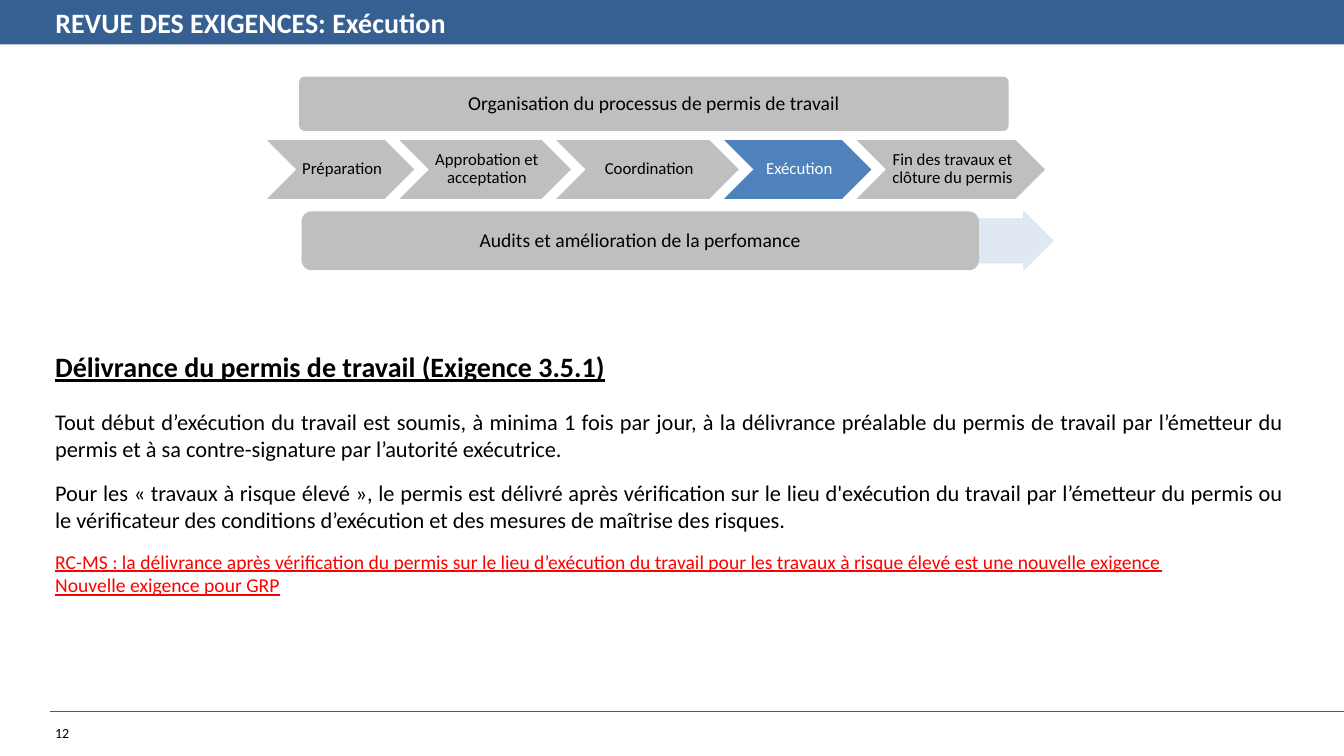
from copy import deepcopy
from dataclasses import dataclass
from typing import Any

from lxml.etree import SubElement
from pptx import Presentation
from pptx.dml.color import RGBColor
from pptx.enum.shapes import MSO_CONNECTOR, MSO_SHAPE as Preset
from pptx.enum.text import MSO_ANCHOR as Anchor, PP_ALIGN as Align
from pptx.oxml.ns import qn
from pptx.util import Cm, Pt

NAVY = RGBColor(0x37, 0x60, 0x92)
BLUE = RGBColor(0x4F, 0x81, 0xBD)
PALE_BLUE = RGBColor(0xDC, 0xE6, 0xF2)
GREY = RGBColor(0xBF, 0xBF, 0xBF)
RED = RGBColor(0xFF, 0, 0)
BLACK = RGBColor(0, 0, 0)
WHITE = RGBColor(0xFF, 0xFF, 0xFF)

SLIDE_WIDTH, SLIDE_HEIGHT = 33.87, 19.05
TEXT_LEFT = 1.14
BAND_HEIGHT = 1.12
STEP_LEFT, STEP_TOP, STEP_HEIGHT = 6.73, 3.53, 1.48
STEP_OVERLAP = 0.37


@dataclass(frozen=True)
class Box:
    left: float
    top: float
    width: float
    height: float

    def lengths(self) -> tuple[Cm, Cm, Cm, Cm]:
        return Cm(self.left), Cm(self.top), Cm(self.width), Cm(self.height)


@dataclass(frozen=True)
class Bar:
    label: str
    box: Box
    rounding: float


@dataclass(frozen=True)
class Step:
    label: str
    width: float
    fill: RGBColor = GREY
    color: RGBColor = BLACK


@dataclass(frozen=True)
class Passage:
    text: str
    font: dict[str, Any]
    layout: dict[str, Any]
    color: RGBColor = BLACK


BARS = (
    Bar("Organisation du processus de permis de travail", Box(7.54, 1.93, 17.88, 1.37), 0.1),
    Bar("Audits et amélioration de la perfomance", Box(7.6, 5.33, 17.07, 1.48), 0.17),
)
STEPS = (
    Step("Préparation", 3.71),
    Step("Approbation et acceptation", 4.32),
    Step("Coordination", 4.6),
    Step("Exécution", 3.71, BLUE, WHITE),
    Step("Fin des travaux et clôture du permis", 4.75),
)
SPACED = {"space_before": Pt(6), "space_after": Pt(6)}
JUSTIFIED = SPACED | {"alignment": Align.JUSTIFY}
PASSAGES = (
    Passage("Délivrance du permis de travail (Exigence 3.5.1)",
            {"size": Pt(20), "bold": True, "underline": True}, {"space_after": Pt(12)}),
    Passage("Tout début d’exécution du travail est soumis, à minima 1 fois par jour, à la "
            "délivrance préalable du permis de travail par l’émetteur du permis et à sa "
            "contre-signature par l’autorité exécutrice.", {"size": Pt(16)}, JUSTIFIED),
    Passage("Pour les « travaux à risque élevé », le permis est délivré après vérification sur "
            "le lieu d'exécution du travail par l’émetteur du permis ou le vérificateur des "
            "conditions d’exécution et des mesures de maîtrise des risques.",
            {"size": Pt(16)}, JUSTIFIED),
    Passage("RC-MS : la délivrance après vérification du permis sur le lieu d’exécution du "
            "travail pour les travaux à risque élevé est une nouvelle exigence\v"
            "Nouvelle exigence pour GRP", {"size": Pt(14), "underline": True}, SPACED, RED),
)


def set_values(target: Any, values: dict[str, Any]) -> None:
    for name, value in values.items():
        setattr(target, name, value)


def write(paragraph: Any, passage: Passage) -> None:
    paragraph.text = passage.text
    set_values(paragraph, passage.layout)
    for run in paragraph.runs:
        set_values(run.font, {"name": "Calibri"} | passage.font)
        run.font.color.rgb = passage.color
    for line_break in paragraph._p.findall(qn("a:br")):
        line_break.insert(0, deepcopy(paragraph.runs[0]._r.rPr))


def add_filled(slide: Any, preset: Preset, box: Box, fill: RGBColor) -> Any:
    shape = slide.shapes.add_shape(preset, *box.lengths())
    shape.shadow.inherit = False
    shape.fill.solid()
    shape.fill.fore_color.rgb = fill
    shape.line.fill.background()
    return shape


def add_label(shape: Any, label: str, size: int, color: RGBColor, left_inset: float) -> None:
    margins = {"margin_left": Cm(left_inset), "margin_right": Cm(0.05),
               "margin_top": Cm(0.05), "margin_bottom": Cm(0.05)}
    set_values(shape.text_frame,
               margins | {"word_wrap": True, "vertical_anchor": Anchor.MIDDLE})
    write(shape.text_frame.paragraphs[0],
          Passage(label, {"size": Pt(size)},
                  {"alignment": Align.CENTER, "line_spacing": 0.9}, color))


def add_title(slide: Any) -> None:
    band = add_filled(slide, Preset.RECTANGLE, Box(0, 0, SLIDE_WIDTH, BAND_HEIGHT), NAVY)
    title = slide.shapes.title
    title.element.addprevious(band.element)
    left, top, width, height = Box(TEXT_LEFT, 0, 26.59, BAND_HEIGHT).lengths()
    set_values(title, {"left": left, "top": top, "width": width, "height": height})
    set_values(title.text_frame, {"word_wrap": True, "vertical_anchor": Anchor.MIDDLE})
    write(title.text_frame.paragraphs[0],
          Passage("REVUE DES EXIGENCES: Exécution", {"size": Pt(20), "bold": True},
                  {"alignment": Align.LEFT}, WHITE))


def add_process(slide: Any) -> None:
    arrow = add_filled(slide, Preset.RIGHT_ARROW, Box(22.81, 5.33, 3.73, 1.48), PALE_BLUE)
    arrow.adjustments[0] = 0.75
    arrow.line.color.rgb = PALE_BLUE
    arrow.line.width = Pt(0.75)
    for color in arrow.element.spPr.iter(qn("a:srgbClr")):
        SubElement(color, qn("a:alpha"), val="90000")

    for bar in BARS:
        shape = add_filled(slide, Preset.ROUNDED_RECTANGLE, bar.box, GREY)
        shape.adjustments[0] = bar.rounding
        add_label(shape, bar.label, 14, BLACK, 0.05)

    left = STEP_LEFT
    for step in STEPS:
        box = Box(left, STEP_TOP, step.width, STEP_HEIGHT)
        chevron = add_filled(slide, Preset.CHEVRON, box, step.fill)
        add_label(chevron, step.label, 12, step.color, 0.13)
        left += step.width - STEP_OVERLAP


def add_text(slide: Any, box: Box, passages: tuple[Passage, ...]) -> None:
    frame = slide.shapes.add_textbox(*box.lengths()).text_frame
    frame.word_wrap = True
    for index, passage in enumerate(passages):
        write(frame.add_paragraph() if index else frame.paragraphs[0], passage)


def add_footer(slide: Any) -> None:
    rule = slide.shapes.add_connector(
        MSO_CONNECTOR.STRAIGHT, Cm(1.27), Cm(17.93), Cm(SLIDE_WIDTH), Cm(17.93))
    rule.line.color.rgb = NAVY
    rule.line.width = Pt(0.75)
    SubElement(rule.element.spPr, qn("a:effectLst"))
    add_text(slide, Box(TEXT_LEFT, 18.14, 1.8, 0.69), (Passage("12", {"size": Pt(10)}, {}),))


def main() -> None:
    deck = Presentation()
    deck.slide_width, deck.slide_height = Cm(SLIDE_WIDTH), Cm(SLIDE_HEIGHT)
    slide = deck.slides.add_slide(deck.slide_layouts.get_by_name("Title Only"))
    add_title(slide)
    add_footer(slide)
    add_text(slide, Box(TEXT_LEFT, 8.69, 31.47, 9.6), PASSAGES)
    add_process(slide)
    deck.save("out.pptx")


if __name__ == "__main__":
    main()
